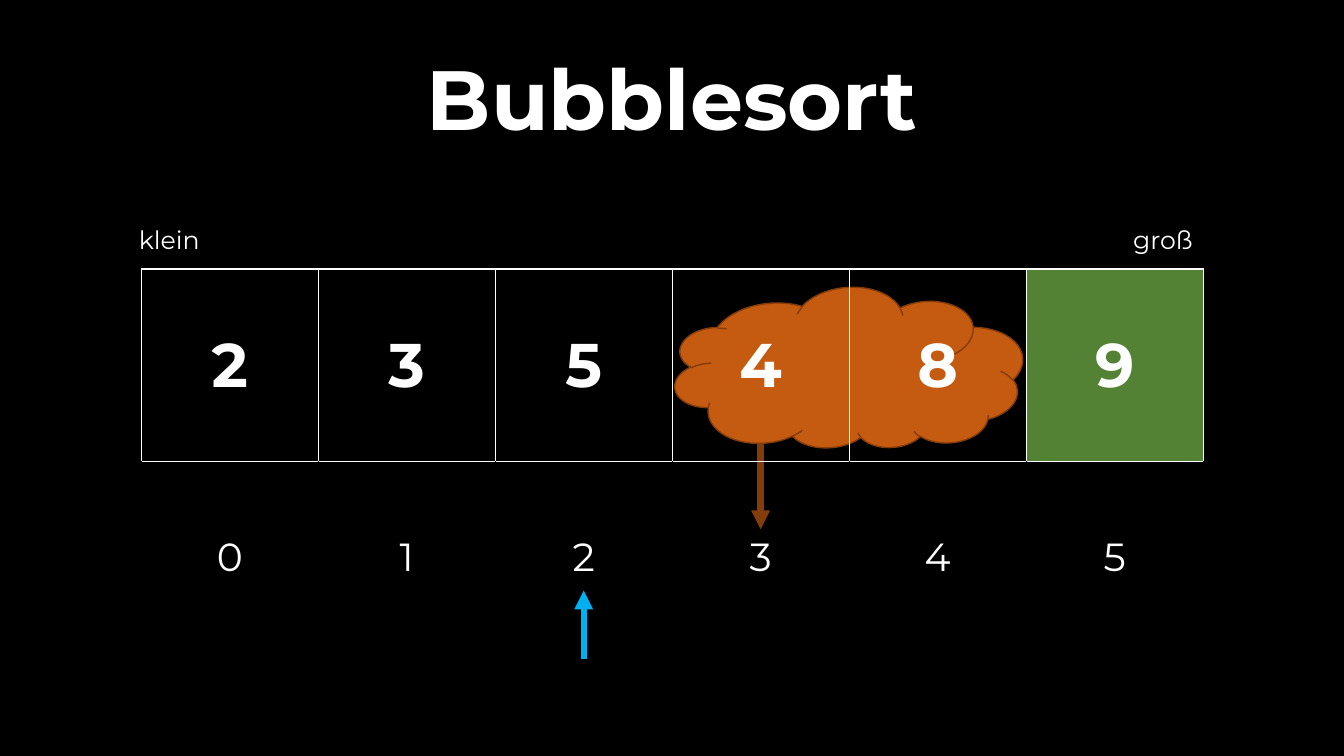
import pptx
import pptx.dml.color
import pptx.enum.shapes
import pptx.enum.text
import pptx.oxml
import pptx.oxml.ns
import pptx.util
from dataclasses import dataclass

Cm = pptx.util.Cm
ALIGN = pptx.enum.text.PP_ALIGN
MIDDLE = pptx.enum.text.MSO_ANCHOR.MIDDLE


@dataclass(frozen=True)
class Theme:
    font: str = "Montserrat"
    background: str = "000000"
    text: str = "FFFFFF"
    sorted_cell: str = "548235"
    bubble: str = "C55A11"
    bubble_edge: str = "843C0B"
    pointer: str = "00B0F0"
    title_size: int = 60
    value_size: int = 44
    index_size: int = 28
    label_size: int = 18
    thin: float = 1
    thick: float = 4.5


def rgb(colour):
    return pptx.dml.color.RGBColor.from_string(colour)


def write(frame, text, *, font, size, color, bold=False, align=ALIGN.LEFT,
          line_spacing=None, space_before=None):
    paragraph = frame.paragraphs[0]
    paragraph.alignment = align
    if line_spacing is not None:
        paragraph.line_spacing = line_spacing
    if space_before is not None:
        paragraph.space_before = pptx.util.Pt(space_before)
    run = paragraph.add_run()
    run.text = text
    run.font.name = font
    run.font.size = pptx.util.Pt(size)
    run.font.bold = bold
    run.font.color.rgb = rgb(color)


class SlideBuilder:
    def __init__(self, slide, theme):
        self.slide = slide
        self.theme = theme
        slide.background.fill.solid()
        slide.background.fill.fore_color.rgb = rgb(theme.background)

    def label(self, text, left, top, width, height, size, anchor=None, **text_format):
        box = self.slide.shapes.add_textbox(Cm(left), Cm(top), Cm(width), Cm(height))
        box.text_frame.word_wrap = True
        if anchor is not None:
            box.text_frame.vertical_anchor = anchor
        write(box.text_frame, text, font=self.theme.font, size=size,
              color=self.theme.text, **text_format)

    def arrow(self, x, start, end, color):
        line = self.slide.shapes.add_connector(
            pptx.enum.shapes.MSO_CONNECTOR.STRAIGHT, Cm(x), Cm(start), Cm(x), Cm(end))
        line.line.color.rgb = rgb(color)
        line.line.width = pptx.util.Pt(self.theme.thick)
        head = pptx.oxml.parse_xml(
            f'<a:tailEnd {pptx.oxml.ns.nsdecls("a")} type="triangle"/>')
        line.line._get_or_add_ln().append(head)
        line._element.spPr.append(
            pptx.oxml.parse_xml(f'<a:effectLst {pptx.oxml.ns.nsdecls("a")}/>'))

    def cloud(self, left, top, width, height, rotation):
        bubble = self.slide.shapes.add_shape(
            pptx.enum.shapes.MSO_SHAPE.CLOUD, Cm(left), Cm(top), Cm(width), Cm(height))
        bubble.shadow.inherit = False
        bubble.rotation = rotation
        bubble._element.spPr.xfrm.set("flipV", "1")
        bubble.fill.solid()
        bubble.fill.fore_color.rgb = rgb(self.theme.bubble)
        bubble.line.color.rgb = rgb(self.theme.bubble_edge)
        bubble.line.width = pptx.util.Pt(self.theme.thin)

    def borders(self, cell, **colors):
        properties = cell._tc.get_or_add_tcPr()
        width = pptx.util.Pt(self.theme.thin)
        for position, side in enumerate("LRTB"):
            properties.insert(position, pptx.oxml.parse_xml(
                f'<a:ln{side} {pptx.oxml.ns.nsdecls("a")} w="{width}"><a:solidFill>'
                f'<a:srgbClr val="{colors[side]}"/></a:solidFill></a:ln{side}>'))

    def array(self, values, sorted_from, left, top, column_width, row_height):
        theme = self.theme
        table = self.slide.shapes.add_table(
            2, len(values), Cm(left), Cm(top),
            Cm(column_width * len(values)), Cm(2 * row_height)).table
        table.first_row = table.horz_banding = False
        for column in table.columns:
            column.width = Cm(column_width)
        for row in table.rows:
            row.height = Cm(row_height)

        value_edges = dict.fromkeys("LRTB", theme.text)
        index_edges = dict.fromkeys("LRB", theme.background) | {"T": theme.text}
        rows = [(values, theme.value_size, True, value_edges),
                (range(len(values)), theme.index_size, False, index_edges)]
        for row, (entries, size, bold, edges) in enumerate(rows):
            for column, entry in enumerate(entries):
                cell = table.cell(row, column)
                cell.vertical_anchor = MIDDLE
                if row == 0 and column >= sorted_from:
                    cell.fill.solid()
                    cell.fill.fore_color.rgb = rgb(theme.sorted_cell)
                else:
                    cell.fill.background()
                self.borders(cell, **edges)
                write(cell.text_frame, str(entry), font=theme.font, size=size,
                      color=theme.text, bold=bold, align=ALIGN.CENTER)


def main():
    deck = pptx.Presentation()
    deck.slide_width, deck.slide_height = Cm(33.87), Cm(19.05)
    theme = Theme()
    page = SlideBuilder(deck.slides.add_slide(deck.slide_layouts[6]), theme)

    array_left, array_top, cell_width, cell_height = 3.56, 6.78, 4.46, 4.85

    def cell_centre(index):
        return array_left + (index + 0.5) * cell_width

    # Bubble around the compared pair, behind the array
    page.arrow(cell_centre(3), 9.88, 13.34, theme.bubble_edge)
    page.cloud(16.99, 7.26, 8.79, 4.11, rotation=355.5)

    # Array with values and indices
    page.array([2, 3, 5, 4, 8, 9], 5, array_left, array_top, cell_width, cell_height)

    # Direction of the order
    for text, left, align in [("groß", 26.47, ALIGN.RIGHT), ("klein", 3.25, ALIGN.LEFT)]:
        page.label(text, left, 5.54, 3.84, 1.02, theme.label_size, align=align)

    # Pointer to the current index
    page.arrow(cell_centre(2), 16.61, 14.88, theme.pointer)

    # Title
    page.label("Bubblesort", 0.38, 0.79, 33.1, 3.61, theme.title_size, anchor=MIDDLE,
               bold=True, align=ALIGN.CENTER, line_spacing=0.9, space_before=10)

    deck.save("out.pptx")


if __name__ == "__main__":
    main()
